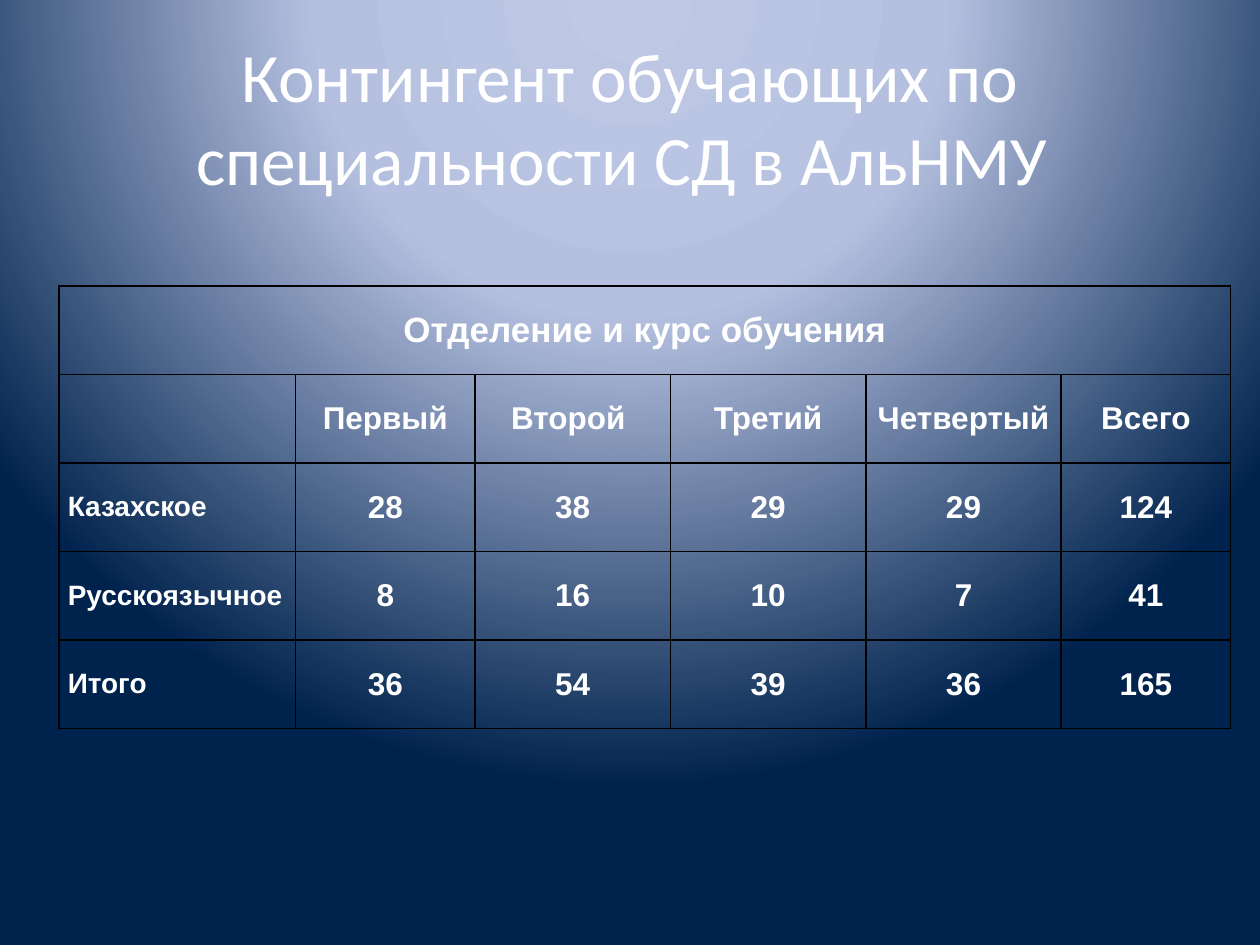
from lxml import etree
from pptx import Presentation
from pptx.dml.color import RGBColor
from pptx.enum.text import MSO_ANCHOR, MSO_AUTO_SIZE, PP_ALIGN
from pptx.oxml import parse_xml
from pptx.oxml.ns import nsdecls
from pptx.util import Pt

CENTER, JUSTIFY = PP_ALIGN.CENTER, PP_ALIGN.JUSTIFY
MIDDLE = MSO_ANCHOR.MIDDLE
NO_AUTOFIT = MSO_AUTO_SIZE.NONE
TITLE_ONLY = 5

COLORS = {
    "glow": "BFC9E5",
    "haze": "B5C0E0",
    "navy": "00234D",
    "text": "FFFFFF",
    "border": "000000",
}
BACKGROUND_STOPS = [(0, "glow"), (40, "haze"), (100, "navy")]

TITLE = "Контингент обучающих по специальности СД в АльНМУ "
HEADING = "Отделение и курс обучения"
ENROLMENT = [
    ["", "Первый", "Второй ", "Третий", "Четвертый", "Всего"],
    ["Казахское", "28", "38", "29", "29", "124"],
    ["Русскоязычное", "8", "16", "10", "7", "41"],
    ["Итого", "36", "54", "39", "36", "165"],
]
COLUMN_WIDTHS = [135.2, 102.4, 111.7, 111.7, 111.7, 96.8]


def write_text(frame, text, *, size, font="Arial", bold=False, align=CENTER):
    paragraph = frame.paragraphs[0]
    paragraph.alignment = align
    run = paragraph.add_run()
    run.text = text
    run.font.size = Pt(size)
    run.font.name = font
    run.font.bold = bold
    run.font.color.rgb = RGBColor.from_string(COLORS["text"])


def paint_background(slide):
    stops = "".join(
        f'<a:gs pos="{percent * 1000}"><a:srgbClr val="{COLORS[name]}"/></a:gs>'
        for percent, name in BACKGROUND_STOPS
    )
    background = parse_xml(
        f'<p:bg {nsdecls("p", "a")}><p:bgPr><a:gradFill rotWithShape="1">'
        f'<a:gsLst>{stops}</a:gsLst><a:path path="circle">'
        '<a:fillToRect l="50000" t="-80000" r="50000" b="180000"/>'
        '</a:path></a:gradFill><a:effectLst/></p:bgPr></p:bg>'
    )
    slide.element.cSld.insert(0, background)


def place_title(slide, left, top, width, height):
    title = slide.shapes.title
    title.left, title.top = Pt(left), Pt(top)
    title.width, title.height = Pt(width), Pt(height)
    frame = title.text_frame
    frame.word_wrap = True
    frame.auto_size = NO_AUTOFIT
    frame.vertical_anchor = MIDDLE
    write_text(frame, TITLE, size=39.6, font="Calibri")


def format_cell(cell):
    cell.vertical_anchor = MIDDLE
    cell.margin_left = cell.margin_right = Pt(5)
    cell.margin_top = cell.margin_bottom = Pt(0)
    cell.fill.background()
    properties = cell._tc.get_or_add_tcPr()
    for position, side in enumerate(("lnL", "lnR", "lnT", "lnB")):
        border = parse_xml(f'<a:{side} {nsdecls("a")} w="{Pt(1)}"/>')
        fill = etree.SubElement(border, border.tag.replace(side, "solidFill"))
        color = etree.SubElement(fill, border.tag.replace(side, "srgbClr"))
        color.set("val", COLORS["border"])
        properties.insert(position, border)


def place_enrolment_table(slide, left, top, width, height):
    row_count = len(ENROLMENT) + 1
    table = slide.shapes.add_table(
        row_count, len(COLUMN_WIDTHS), Pt(left), Pt(top), Pt(width), Pt(height)
    ).table
    table.first_row = table.horz_banding = False
    for column, column_width in zip(table.columns, COLUMN_WIDTHS):
        column.width = Pt(column_width)
    for row in table.rows:
        row.height = Pt(height / row_count)
        for cell in row.cells:
            format_cell(cell)

    heading = table.cell(0, 0)
    heading.merge(table.cell(0, len(COLUMN_WIDTHS) - 1))
    write_text(heading.text_frame, HEADING, size=20, bold=True)
    for row_index, values in enumerate(ENROLMENT, start=1):
        for column_index, value in enumerate(values):
            if not value:
                continue
            is_label = column_index == 0
            write_text(
                table.cell(row_index, column_index).text_frame,
                value,
                size=16 if is_label else 18,
                bold=True,
                align=JUSTIFY if is_label else CENTER,
            )


def main():
    presentation = Presentation()
    presentation.slide_width, presentation.slide_height = Pt(720), Pt(540)
    slide = presentation.slides.add_slide(presentation.slide_layouts[TITLE_ONLY])
    paint_background(slide)
    place_title(slide, 36, 21.6, 648, 90)
    place_enrolment_table(slide, 33.8, 163.3, sum(COLUMN_WIDTHS), 253)
    presentation.save("out.pptx")


if __name__ == "__main__":
    main()
